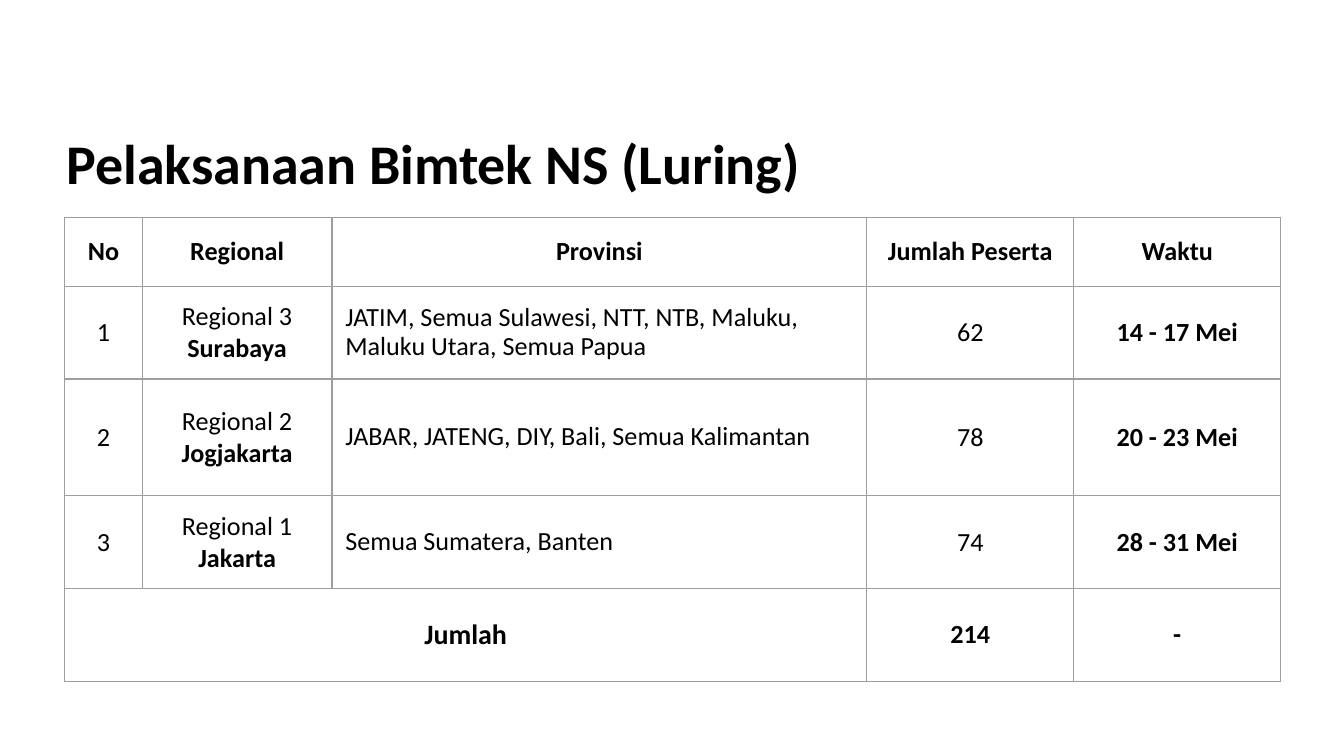
from lxml.etree import SubElement
from pptx import Presentation
from pptx.dml.color import RGBColor
from pptx.enum.text import MSO_ANCHOR, PP_ALIGN
from pptx.oxml.ns import qn
from pptx.util import Inches, Pt

COLORS = {"background": "FFFFFF", "text": "000000", "border": "9E9E9E"}
FONT = "Calibri"

COLUMN_WIDTHS = [0.58, 1.41, 3.98, 1.54, 1.54]
ROW_HEIGHTS = [0.51, 0.69, 0.87, 0.69, 0.69]
PROVINCE, TIME = 2, 4
ROWS = [
    ["No", "Regional", "Provinsi", "Jumlah Peserta", "Waktu"],
    ["1", "Regional 3\nSurabaya",
     "JATIM, Semua Sulawesi, NTT, NTB, Maluku, Maluku Utara, Semua Papua",
     "62", "14 - 17 Mei"],
    ["2", "Regional 2\nJogjakarta",
     "JABAR, JATENG, DIY, Bali, Semua Kalimantan", "78", "20 - 23 Mei"],
    ["3", "Regional 1\nJakarta", "Semua Sumatera, Banten", "74", "28 - 31 Mei"],
    ["Jumlah", "", "", "214", "-"],
]


def rgb(name):
    return RGBColor.from_string(COLORS[name])


def format_paragraph(p, size, bold):
    for r in p.runs:
        r.font.name = FONT
        r.font.size = Pt(size)
        r.font.bold = bold
        r.font.color.rgb = rgb("text")


def add_title(s, left, top, width, height):
    sp = s.shapes.add_textbox(Inches(left), Inches(top), Inches(width), Inches(height))
    tf = sp.text_frame
    tf.word_wrap = True
    tf.vertical_anchor = MSO_ANCHOR.BOTTOM
    tf.margin_left = tf.margin_right = Pt(5.4)
    tf.margin_top = tf.margin_bottom = Pt(2.7)
    tf.text = "Pelaksanaan Bimtek NS (Luring)"
    p = tf.paragraphs[0]
    p.line_spacing = 0.9
    format_paragraph(p, 30, True)


def style_cell(cell):
    """Set borders, fill, margins and anchor."""
    tc_pr = cell._tc.get_or_add_tcPr()
    for side in ("a:lnL", "a:lnR", "a:lnT", "a:lnB"):
        ln = SubElement(tc_pr, qn(side), w=str(Pt(0.75)))
        fill = SubElement(ln, qn("a:solidFill"))
        SubElement(fill, qn("a:srgbClr"), val=COLORS["border"])
    cell.fill.background()
    cell.margin_left = cell.margin_right = Inches(0.1)
    cell.margin_top = cell.margin_bottom = Inches(0.1)
    cell.vertical_anchor = MSO_ANCHOR.MIDDLE


def fill_cell(cell, text, row, col):
    is_body = 0 < row < len(ROWS) - 1
    cell.text_frame.text = text
    for i, p in enumerate(cell.text_frame.paragraphs):
        if is_body and col == PROVINCE:
            p.line_spacing = 0.9
        else:
            p.alignment = PP_ALIGN.CENTER
        if is_body and col == TIME:
            p.space_after = Pt(12)
        size = 15 if text == "Jumlah" else 14
        format_paragraph(p, size, not is_body or col == TIME or i > 0)


def add_schedule(s, left, top, width, height):
    table = s.shapes.add_table(len(ROWS), len(COLUMN_WIDTHS), Inches(left),
                               Inches(top), Inches(width), Inches(height)).table
    table.first_row = table.horz_banding = False
    for column, w in zip(table.columns, COLUMN_WIDTHS):
        column.width = Inches(w)
    for table_row, h in zip(table.rows, ROW_HEIGHTS):
        table_row.height = Inches(h)
    total = len(ROWS) - 1
    table.cell(total, 0).merge(table.cell(total, PROVINCE))
    for row, texts in enumerate(ROWS):
        for col, text in enumerate(texts):
            cell = table.cell(row, col)
            style_cell(cell)
            if not cell.is_spanned:
                fill_cell(cell, text, row, col)


def main():
    prs = Presentation()
    prs.slide_width = Inches(10)
    prs.slide_height = prs.slide_width * 9 // 16
    s = prs.slides.add_slide(prs.slide_layouts[6])
    s.background.fill.solid()
    s.background.fill.fore_color.rgb = rgb("background")
    add_title(s, 0.42, 0.84, 8.69, 0.66)
    add_schedule(s, 0.48, 1.62, sum(COLUMN_WIDTHS), sum(ROW_HEIGHTS))
    prs.save("out.pptx")


if __name__ == "__main__":
    main()
